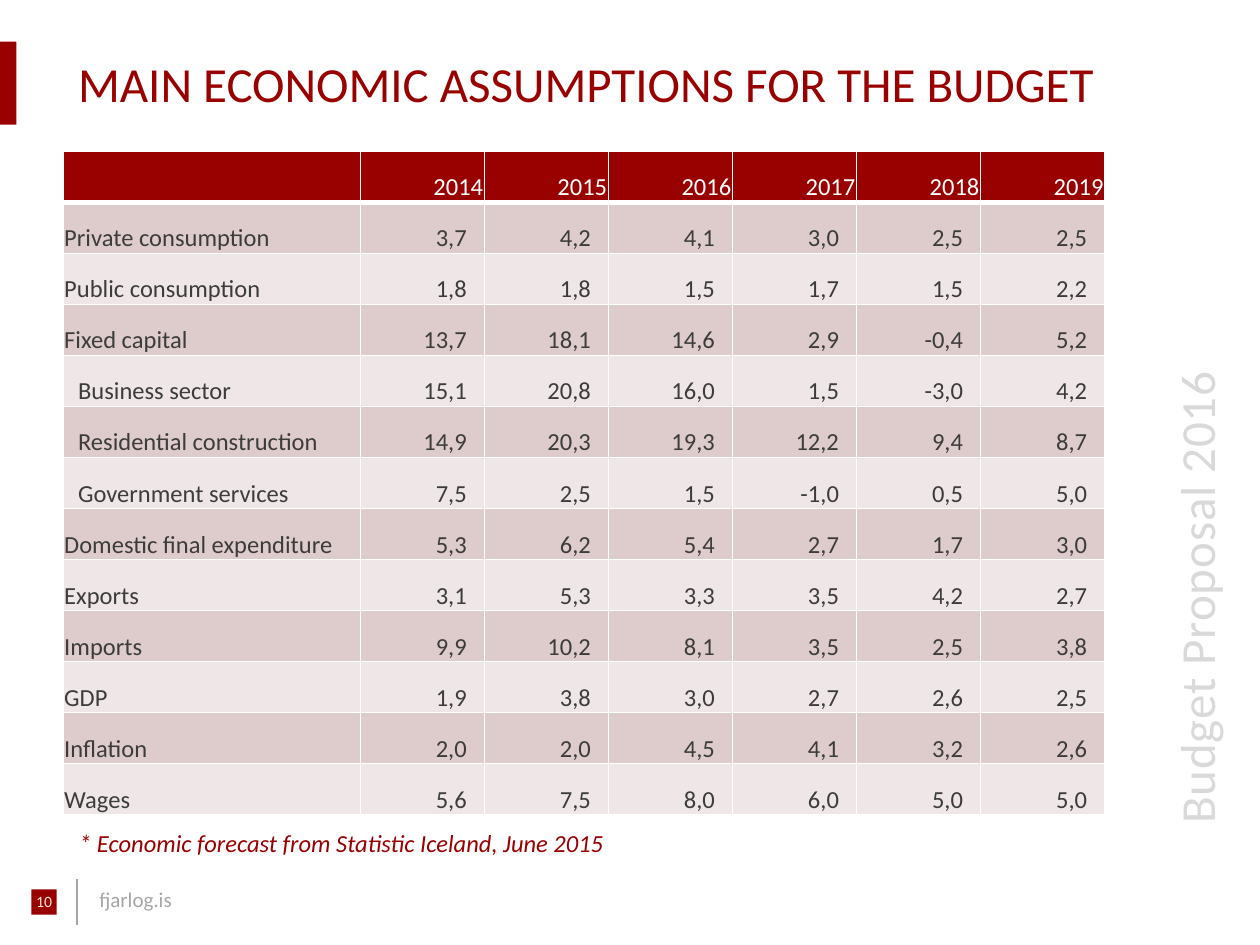
from lxml.etree import SubElement
from pptx import Presentation
from pptx.dml.color import RGBColor
from pptx.enum.shapes import MSO_CONNECTOR as Connector, MSO_SHAPE as Shape
from pptx.enum.text import MSO_ANCHOR as Anchor, MSO_AUTO_SIZE as AutoSize, PP_ALIGN as Align
from pptx.oxml.ns import qn
from pptx.util import Inches, Pt

COLORS = {
    "red": "990000",
    "dark_band": "DECCCC",
    "light_band": "EFE7E7",
    "body": "3C3C3B",
    "white": "FFFFFF",
    "footer": "A6A6A6",
    "side": "D9D9D9",
    "number": "FFE6DC",
}
FONT = "Calibri"
YEARS = ["2014", "2015", "2016", "2017", "2018", "2019"]
FORECAST = [
    ("Private consumption", "3,7 4,2 4,1 3,0 2,5 2,5"),
    ("Public consumption", "1,8 1,8 1,5 1,7 1,5 2,2"),
    ("Fixed capital", "13,7 18,1 14,6 2,9 -0,4 5,2"),
    ("Business sector", "15,1 20,8 16,0 1,5 -3,0 4,2"),
    ("Residential construction", "14,9 20,3 19,3 12,2 9,4 8,7"),
    ("Government services", "7,5 2,5 1,5 -1,0 0,5 5,0"),
    ("Domestic final expenditure", "5,3 6,2 5,4 2,7 1,7 3,0"),
    ("Exports", "3,1 5,3 3,3 3,5 4,2 2,7"),
    ("Imports", "9,9 10,2 8,1 3,5 2,5 3,8"),
    ("GDP", "1,9 3,8 3,0 2,7 2,6 2,5"),
    ("Inflation", "2,0 2,0 4,5 4,1 3,2 2,6"),
    ("Wages", "5,6 7,5 8,0 6,0 5,0 5,0"),
]
FIXED_CAPITAL_PARTS = {"Business sector", "Residential construction", "Government services"}


def color(name):
    return RGBColor.from_string(COLORS[name])


def style_para(para, size, color_name, align=Align.LEFT, italic=False):
    para.alignment = align
    para.font.name = FONT
    para.font.size = Pt(size)
    para.font.italic = italic
    para.font.color.rgb = color(color_name)


def add_text(page, box, text, size, color_name, align=Align.LEFT, italic=False,
             margins=(0.1, 0.05), anchor=Anchor.TOP):
    label = page.shapes.add_textbox(*map(Inches, box))
    frame = label.text_frame
    frame.word_wrap = True
    frame.auto_size = AutoSize.NONE
    frame.vertical_anchor = anchor
    frame.margin_left = frame.margin_right = Inches(margins[0])
    frame.margin_top = frame.margin_bottom = Inches(margins[1])
    frame.text = text
    style_para(frame.paragraphs[0], size, color_name, align, italic)
    return label


def add_block(page, box):
    block = page.shapes.add_shape(Shape.RECTANGLE, *map(Inches, box))
    block.shadow.inherit = False
    block.fill.solid()
    block.fill.fore_color.rgb = color("red")
    block.line.fill.background()


def add_title(page, box):
    left, top, width, height = box
    add_block(page, (0, top, 0.13, height))
    add_text(page, box, "MAIN ECONOMIC ASSUMPTIONS FOR THE BUDGET", 28, "red",
             margins=(0.12, 0.06), anchor=Anchor.MIDDLE)


def add_side_label(page, box):
    label = add_text(page, box, "Budget Proposal 2016", 28, "side")
    label.rotation = 270
    span = label.text_frame.paragraphs[0].runs[0]
    span.font._element.set("spc", "50")


def add_footer(page, box):
    left, top, width, height = box
    add_block(page, (left, top + 0.08, 0.2, 0.2))
    add_text(page, (left - 0.25, top + 0.04, 0.7, 0.47), "10", 9, "number",
             Align.CENTER, margins=(0.12, 0.06))
    divider_x = Inches(left + 0.36)
    divider = page.shapes.add_connector(
        Connector.STRAIGHT, divider_x, Inches(top), divider_x, Inches(top + height))
    divider.line.color.rgb = color("footer")
    divider.line.width = Pt(1)
    SubElement(divider._element.spPr, qn("a:effectLst"))
    add_text(page, (left + 0.44, top + 0.01, width - 0.44, 0.3), "fjarlog.is", 12, "footer")


def set_borders(cell, bottom):
    properties = cell._tc.get_or_add_tcPr()
    widths = {"a:lnL": 1, "a:lnR": 1, "a:lnT": 1, "a:lnB": bottom}
    for index, (tag, width) in enumerate(widths.items()):
        border = properties.makeelement(qn(tag), {"w": str(Pt(width))})
        fill = SubElement(border, qn("a:solidFill"))
        SubElement(fill, qn("a:srgbClr"), val=COLORS["white"])
        properties.insert(index, border)


def fill_cell(cell, text, fill, text_color, align, left=0.01, right=0.01, bottom_border=1):
    cell.fill.solid()
    cell.fill.fore_color.rgb = color(fill)
    cell.vertical_anchor = Anchor.BOTTOM
    cell.margin_left, cell.margin_right = Inches(left), Inches(right)
    cell.margin_top, cell.margin_bottom = Inches(0.01), 0
    cell.text = text
    style_para(cell.text_frame.paragraphs[0], 14, text_color, align)
    set_borders(cell, bottom_border)


def add_forecast_table(page, box):
    left, top, width, height = box
    row_count, column_count = len(FORECAST) + 1, len(YEARS) + 1
    table = page.shapes.add_table(row_count, column_count, *map(Inches, box)).table
    label_width = 2.36
    table.columns[0].width = Inches(label_width)
    for column in range(1, column_count):
        table.columns[column].width = Inches((width - label_width) / len(YEARS))
    for row in table.rows:
        row.height = Inches(height / row_count)

    for column, year in enumerate(["", *YEARS]):
        fill_cell(table.cell(0, column), year, "red", "white", Align.RIGHT, bottom_border=3)
    for row, (label, values) in enumerate(FORECAST, 1):
        band = "dark_band" if row % 2 else "light_band"
        indent = 0.12 if label in FIXED_CAPITAL_PARTS else 0.01
        fill_cell(table.cell(row, 0), label, band, "body", Align.LEFT, left=indent)
        for column, value in enumerate(values.split(), 1):
            fill_cell(table.cell(row, column), value, band, "body", Align.RIGHT, right=0.14)


def add_source_note(page, box):
    add_text(page, box, "* Economic forecast from Statistic Iceland, June 2015", 14, "red",
             italic=True)


def main():
    deck = Presentation()
    deck.slide_width, deck.slide_height = Inches(10), Inches(7.5)
    page = deck.slides.add_slide(deck.slide_layouts[6])
    add_side_label(page, (6.78, 3.64, 5.42, 0.57))
    add_footer(page, (0.25, 6.98, 2.31, 0.36))
    add_title(page, (0.5, 0.33, 9.06, 0.66))
    add_source_note(page, (0.53, 6.52, 7.78, 0.34))
    add_forecast_table(page, (0.5, 1.2, 8.27, 5.27))
    deck.save("out.pptx")


if __name__ == "__main__":
    main()
